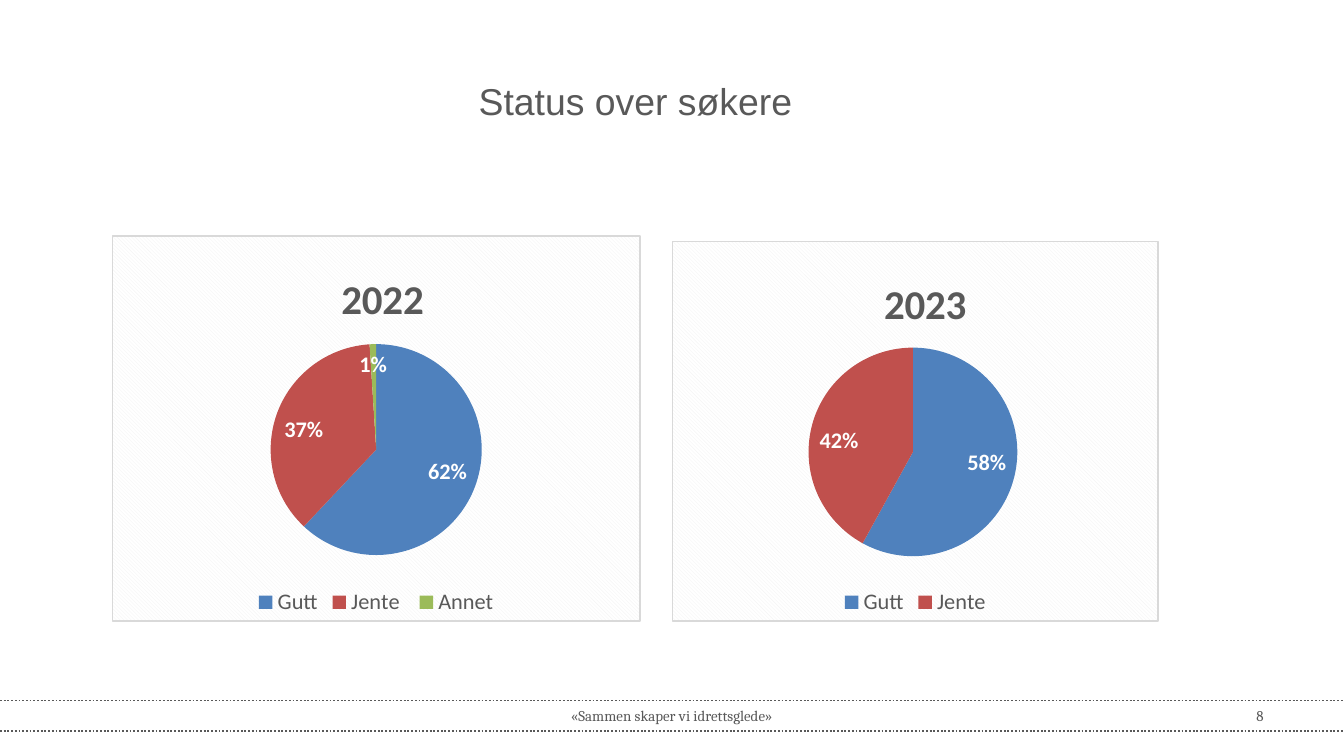
from lxml.etree import SubElement
from pptx import Presentation
from pptx.chart.data import CategoryChartData
from pptx.dml.color import RGBColor
from pptx.enum.chart import XL_CHART_TYPE, XL_LABEL_POSITION, XL_LEGEND_POSITION
from pptx.enum.dml import MSO_LINE
from pptx.enum.shapes import MSO_CONNECTOR
from pptx.enum.text import MSO_ANCHOR, PP_ALIGN
from pptx.oxml import parse_xml
from pptx.oxml.ns import nsdecls, qn
from pptx.util import Cm, Pt

GREY = "595959"
SLICE_COLORS = ["4F81BD", "C0504D", "9BBB59"]
WIDTH, HEIGHT = 25.4, 14.29


def color(hex_code):
    """Return the colour for a hex string."""
    return RGBColor.from_string(hex_code)


def style(font, name, size, hex_code, bold=False):
    """Set the face, size, colour and weight of a font."""
    font.name, font.size, font.bold = name, Pt(size), bold
    font.color.rgb = color(hex_code)


def add_label(slide, box, words, face, size, align, anchor):
    """Place one line of grey text in the box."""
    frame = slide.shapes.add_textbox(*map(Cm, box)).text_frame
    frame.word_wrap = True
    frame.vertical_anchor = anchor
    paragraph = frame.paragraphs[0]
    paragraph.alignment = align
    run = paragraph.add_run()
    run.text = words
    style(run.font, face, size, GREY)


def add_footer(slide, box, motto, number):
    """Place the dotted rules, the motto and the page number in the box."""
    left, top, width, height = box
    for y in (top, top + height):
        rule = slide.shapes.add_connector(
            MSO_CONNECTOR.STRAIGHT, Cm(left), Cm(y), Cm(left + width), Cm(y))
        rule.line.color.rgb = color(GREY)
        rule.line.width = Pt(1)
        rule.line.dash_style = MSO_LINE.ROUND_DOT
        SubElement(rule._element.spPr, qn("a:effectLst"))
    motto_width, number_width, margin = 8.05, 5.92, 1.27
    add_label(slide, (left + (width - motto_width) / 2, top, motto_width, height),
              motto, "Cambria", 8, PP_ALIGN.CENTER, MSO_ANCHOR.MIDDLE)
    add_label(slide, (left + width - margin - number_width, top, number_width, height),
              number, "Cambria", 8, PP_ALIGN.RIGHT, MSO_ANCHOR.MIDDLE)


def layout_xml(x, y, w=None, h=None):
    """Return a manual chart layout in fractions of the chart area."""
    target = '<c:layoutTarget val="inner"/>' if w else ""
    size = f'<c:w val="{w:.2f}"/><c:h val="{h:.2f}"/>' if w else ""
    return parse_xml(
        f'<c:layout {nsdecls("c")}><c:manualLayout>{target}'
        '<c:xMode val="edge"/><c:yMode val="edge"/>'
        f'<c:x val="{x:.2f}"/><c:y val="{y:.2f}"/>{size}'
        '</c:manualLayout></c:layout>')


def set_layout(parent, position, layout):
    """Replace the layout of a chart part at the given child position."""
    for old in parent.findall(qn("c:layout")):
        parent.remove(old)
    parent.insert(position, layout)


def add_applicants(slide, box, year, shares):
    """Place the pie chart of one year's applicants in the box."""
    data = CategoryChartData()
    data.categories = list(shares)
    data.add_series("Series 1", list(shares.values()))
    chart = slide.shapes.add_chart(XL_CHART_TYPE.PIE, *map(Cm, box), data).chart
    style(chart.font, "Calibri", 10, "000000")

    run = chart.chart_title.text_frame.paragraphs[0].add_run()
    run.text = year
    style(run.font, "Calibri", 22, GREY, bold=True)
    chart.chart_title.include_in_layout = False
    set_layout(chart.chart_title._element, 1, layout_xml(0.42, 0.07))

    chart.has_legend = True
    chart.legend.position = XL_LEGEND_POSITION.BOTTOM
    chart.legend.include_in_layout = False
    style(chart.legend.font, "Calibri", 12, GREY)

    pie = chart.plots[0]
    pie.vary_by_categories = True
    for index, hex_code in enumerate(SLICE_COLORS[:len(shares)]):
        fill = pie.series[0].points[index].format.fill
        fill.solid()
        fill.fore_color.rgb = color(hex_code)
    labels = pie.series[0].data_labels
    labels.show_percentage, labels.show_value = True, False
    labels.number_format, labels.number_format_is_linked = "0%", False
    labels.position = XL_LABEL_POSITION.INSIDE_END
    style(labels.font, "Calibri", 12, "FFFFFF", bold=True)

    pie_height = 0.55
    pie_width = pie_height * box[3] / box[2]
    area = chart._chartSpace.chart
    set_layout(area.plotArea, 0,
               layout_xml((1 - pie_width) / 2, 0.28, pie_width, pie_height))
    area.addnext(parse_xml(
        f'<c:spPr {nsdecls("c", "a")}><a:pattFill prst="dkDnDiag">'
        '<a:fgClr><a:srgbClr val="F2F2F2"/></a:fgClr>'
        '<a:bgClr><a:srgbClr val="FFFFFF"/></a:bgClr></a:pattFill>'
        f'<a:ln w="{Pt(0.75)}"><a:solidFill><a:srgbClr val="D9D9D9"/></a:solidFill></a:ln>'
        '</c:spPr>'))


def main():
    """Build the slide on the status of applicants."""
    deck = Presentation()
    deck.slide_width, deck.slide_height = Cm(WIDTH), Cm(HEIGHT)
    slide = deck.slides.add_slide(deck.slide_layouts[6])
    add_footer(slide, (0, 13.24, WIDTH, 0.58), "«Sammen skaper vi idrettsglede»", "8")
    add_label(slide, (7.11, 1.35, 10, 2), "Status over søkere ", "Arial", 20,
              PP_ALIGN.CENTER, MSO_ANCHOR.TOP)
    add_applicants(slide, (2.11, 4.45, 10, 7.3), "2022",
                   {"Gutt": 62, "Jente ": 37, "Annet": 1})
    add_applicants(slide, (12.7, 4.55, 9.2, 7.2), "2023", {"Gutt": 58, "Jente": 42})
    deck.save("out.pptx")


if __name__ == "__main__":
    main()
